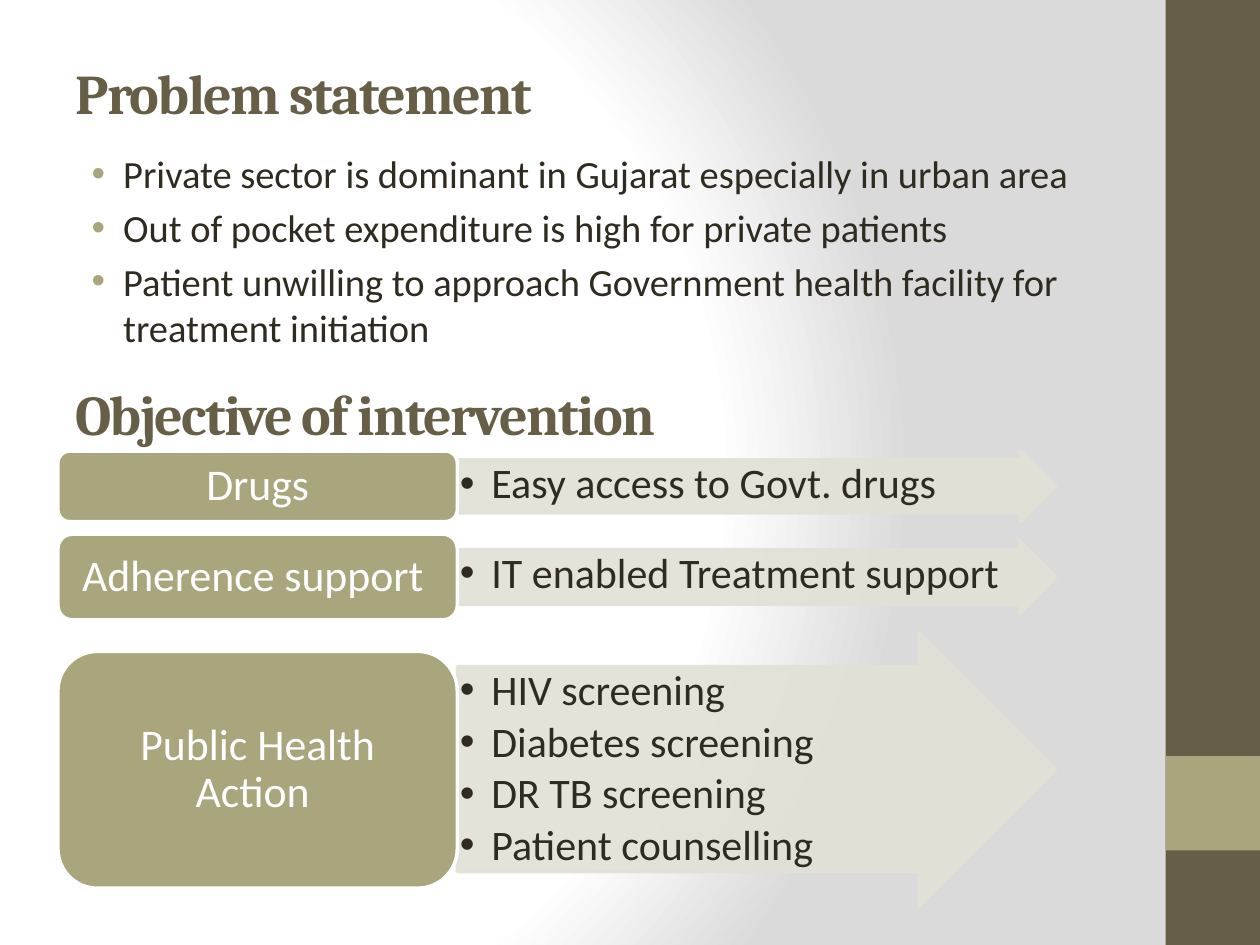
"""Build the problem statement and intervention objectives slide."""
from dataclasses import dataclass

import pptx
import pptx.dml.color
import pptx.enum.shapes
import pptx.enum.text
import pptx.oxml
import pptx.oxml.ns
import pptx.util

SHAPE = pptx.enum.shapes.MSO_SHAPE
ALIGN = pptx.enum.text.PP_ALIGN
ANCHOR = pptx.enum.text.MSO_ANCHOR
WIDTH, HEIGHT = 10, 7.5
BROWN, OLIVE, PALE, INK, WHITE = "675E47", "A9A57C", "E2E1D7", "2F2B20", "FFFFFF"
DRAWING = pptx.oxml.ns.nsdecls("a")
BACKGROUND = f"""<a:gradFill {DRAWING} rotWithShape="1"><a:gsLst>
<a:gs pos="0"><a:srgbClr val="FFFFFF"/></a:gs>
<a:gs pos="75000"><a:srgbClr val="FFFFFF"/></a:gs>
<a:gs pos="100000"><a:srgbClr val="DADADA"/></a:gs></a:gsLst>
<a:path path="circle"><a:fillToRect l="20000" t="50000" r="100000" b="50000"/></a:path>
</a:gradFill>"""


@dataclass
class Area:
    """A rectangle in percent of the slide's width and height."""
    left: float
    top: float
    width: float
    height: float

    def lengths(self) -> list:
        """Return left, top, width and height as lengths."""
        shares = ((self.left, WIDTH), (self.top, HEIGHT),
                  (self.width, WIDTH), (self.height, HEIGHT))
        return [pptx.util.Inches(share * side / 100) for share, side in shares]


@dataclass
class Style:
    """The look of a paragraph."""
    size: float
    color: str
    font: str = "Calibri"
    bold: bool = False
    tracking: int = 0
    align: ALIGN = ALIGN.LEFT
    line: float = 1.0
    before: float = 0
    after: float = 0
    indent: float = 0
    hanging: float = 0
    bullet_color: str = INK


@dataclass
class Objective:
    """A label with the arrow of actions that follows it."""
    label: str
    actions: list[str]
    label_top: float
    label_height: float
    arrow_top: float
    arrow_height: float


HEADING = Style(32, BROWN, "Cambria", bold=True, tracking=-100)
PROBLEM = Style(22, INK, before=4.4, indent=0.38, hanging=0.25, bullet_color=OLIVE)
LABEL = Style(25, WHITE, align=ALIGN.CENTER, line=0.9)
ACTION = Style(24, INK, line=0.9, after=3.6, indent=0.25, hanging=0.25)

PROBLEMS = [
    "Private sector is dominant in Gujarat especially in urban area",
    "Out of pocket expenditure is high for private patients",
    "Patient unwilling to approach Government health facility for treatment initiation",
]
OBJECTIVES = [
    Objective("Drugs", ["Easy access to Govt. drugs"], 47.73, 7.47, 47.73, 7.47),
    Objective("Adherence support ", ["IT enabled Treatment support"],
              56.53, 9.07, 57.2, 7.73),
    Objective("Public Health Action ",
              ["HIV screening", "Diabetes screening", "DR TB screening",
               "Patient counselling"], 68.93, 25.07, 66.93, 28.93),
]


def rgb(color: str) -> pptx.dml.color.RGBColor:
    """Turn a hex string into a colour."""
    return pptx.dml.color.RGBColor.from_string(color)


def write(box, lines: list[str], style: Style, anchor: ANCHOR, inset=(0.1, 0.05)) -> None:
    """Fill a box with one styled paragraph per line."""
    frame = box.text_frame
    frame.word_wrap = True
    frame.auto_size = pptx.enum.text.MSO_AUTO_SIZE.NONE
    frame.vertical_anchor = anchor
    frame.margin_left = frame.margin_right = pptx.util.Inches(inset[0])
    frame.margin_top = frame.margin_bottom = pptx.util.Inches(inset[1])
    for index, line in enumerate(lines):
        para = frame.add_paragraph() if index else frame.paragraphs[0]
        para.alignment = style.align
        para.line_spacing = style.line
        para.space_before = pptx.util.Pt(style.before)
        para.space_after = pptx.util.Pt(style.after)
        if style.hanging:
            add_bullet(para, style)
        span = para.add_run()
        span.text = line
        span.font.name = style.font
        span.font.size = pptx.util.Pt(style.size)
        span.font.bold = style.bold
        span.font.color.rgb = rgb(style.color)
        if style.tracking:
            span.font._element.set("spc", str(style.tracking))


def add_bullet(para, style: Style) -> None:
    """Give a paragraph a hanging bullet."""
    properties = para._p.get_or_add_pPr()
    properties.set("marL", str(pptx.util.Inches(style.indent)))
    properties.set("indent", str(pptx.util.Inches(-style.hanging)))
    for markup in (
        f'<a:buClr {DRAWING}><a:srgbClr val="{style.bullet_color}"/></a:buClr>',
        f'<a:buFont {DRAWING} typeface="Arial"/>',
        f'<a:buChar {DRAWING} char="•"/>',
    ):
        properties.append(pptx.oxml.parse_xml(markup))


def add_block(page, kind: SHAPE, area: Area, fill: str, line: str = "", opacity: int = 100):
    """Draw a filled shape, with an outline where a line colour is given."""
    block = page.shapes.add_shape(kind, *area.lengths())
    block.shadow.inherit = False
    block.fill.solid()
    block.fill.fore_color.rgb = rgb(fill)
    if line:
        block.line.color.rgb = rgb(line)
        block.line.width = pptx.util.Pt(2)
    else:
        block.line.fill.background()
    if opacity < 100:
        for color in block._element.spPr.iter(pptx.oxml.ns.qn("a:srgbClr")):
            color.append(pptx.oxml.parse_xml(f'<a:alpha {DRAWING} val="{opacity * 1000}"/>'))
    return block


def add_text(page, area: Area, lines: list[str], style: Style, anchor: ANCHOR) -> None:
    """Add a text box."""
    write(page.shapes.add_textbox(*area.lengths()), lines, style, anchor)


def add_objective(page, objective: Objective) -> None:
    """Draw the arrow of actions and the label of one objective."""
    arrow = add_block(page, SHAPE.RIGHT_ARROW,
                      Area(36.3, objective.arrow_top, 47.5, objective.arrow_height),
                      PALE, PALE, 90)
    arrow.adjustments[0], arrow.adjustments[1] = 0.75, 0.5
    write(arrow, objective.actions, ACTION, ANCHOR.TOP, (0.02, 0.02))
    label = add_block(page, SHAPE.ROUNDED_RECTANGLE,
                      Area(4.6, objective.label_top, 31.7, objective.label_height),
                      OLIVE, WHITE)
    write(label, [objective.label], LABEL, ANCHOR.MIDDLE)


def paint_background(page) -> None:
    """Set the circular gradient behind the slide."""
    page.background.fill.solid()
    solid = page.element.find(".//" + pptx.oxml.ns.qn("p:bgPr"))[0]
    solid.getparent().replace(solid, pptx.oxml.parse_xml(BACKGROUND))


def main() -> None:
    """Build and save the deck."""
    deck = pptx.Presentation()
    deck.slide_width, deck.slide_height = pptx.util.Inches(WIDTH), pptx.util.Inches(HEIGHT)
    page = deck.slides.add_slide(deck.slide_layouts.get_by_name("Title Only"))
    paint_background(page)
    add_block(page, SHAPE.RECTANGLE, Area(92.5, 0, 7.5, 100), BROWN)
    add_block(page, SHAPE.RECTANGLE, Area(92.5, 80, 7.5, 10), OLIVE)
    title = page.shapes.title
    title.left, title.top, title.width, title.height = Area(5, 4, 92.7, 11.6).lengths()
    write(title, ["Problem statement"], HEADING, ANCHOR.MIDDLE)
    add_text(page, Area(5, 15.2, 83.3, 25.87), PROBLEMS, PROBLEM, ANCHOR.TOP)
    add_text(page, Area(5, 39.6, 92.7, 8.13), ["Objective of intervention"],
             HEADING, ANCHOR.MIDDLE)
    for objective in OBJECTIVES:
        add_objective(page, objective)
    deck.save("out.pptx")


if __name__ == "__main__":
    main()
